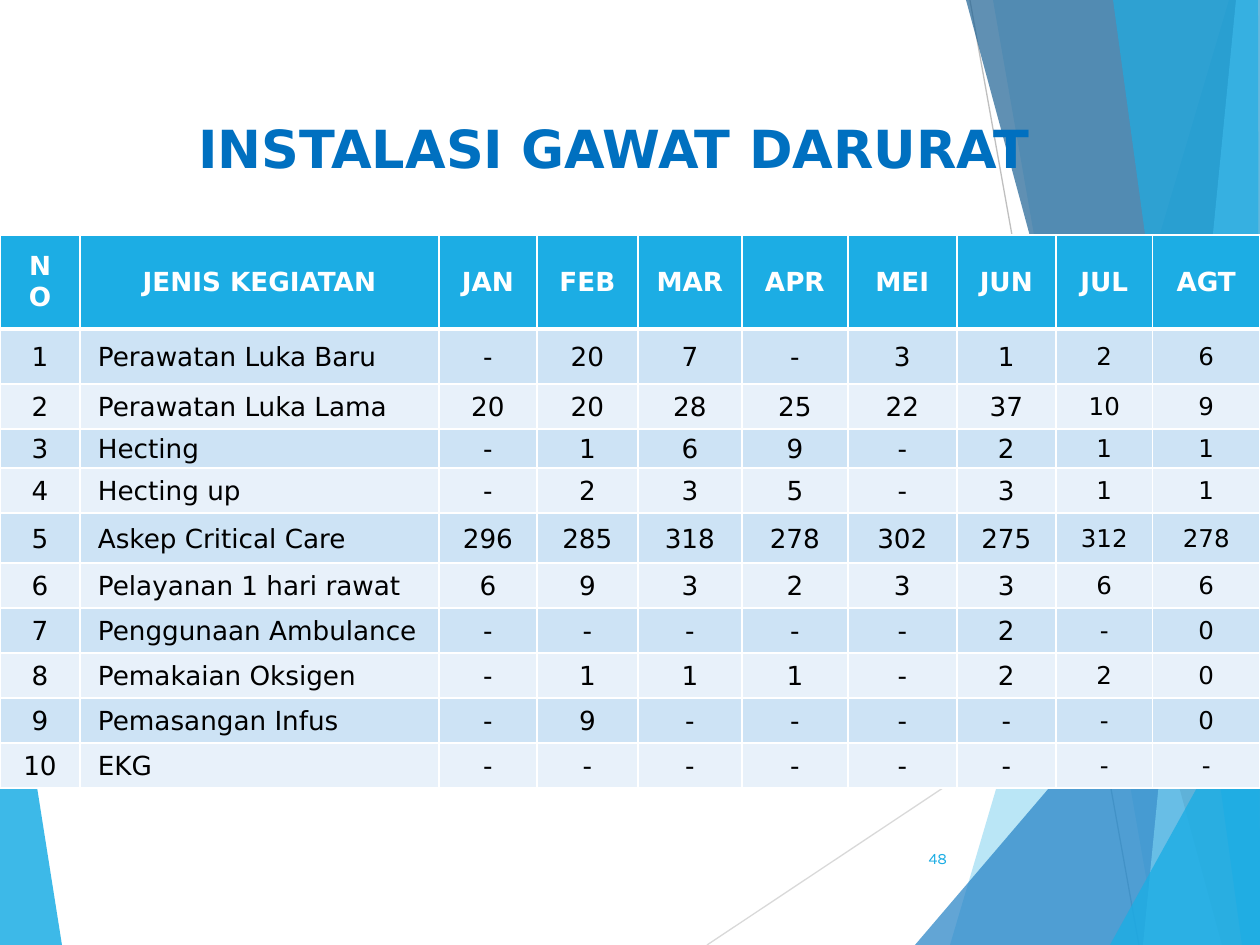
from dataclasses import dataclass

from lxml.etree import SubElement
from pptx import Presentation
from pptx.dml.color import RGBColor
from pptx.enum.shapes import MSO_CONNECTOR
from pptx.enum.text import MSO_ANCHOR, PP_ALIGN
from pptx.oxml.ns import qn
from pptx.util import Pt

PX = 914400 / 126


@dataclass(frozen=True)
class Theme:
    """Colours, fonts and type sizes of the slide."""
    title: str = "0070C0"
    accent: str = "1CADE4"
    blue: str = "2683C6"
    navy: str = "1D6294"
    sky: str = "77CEEF"
    band: str = "CDE3F5"
    pale: str = "E8F1FA"
    white: str = "FFFFFF"
    black: str = "000000"
    light_grey: str = "D9D9D9"
    grey: str = "BFBFBF"
    font: str = "DejaVu Sans"
    number_font: str = "Karla"
    title_size: int = 30
    table_size: int = 15
    late_size: int = 14
    number_size: int = 9


THEME = Theme()
RAYS = [
    ((707, 945), (1260, 577), THEME.light_grey),
    ((970, 0), (1139, 945), THEME.grey),
]
CORNER = (THEME.accent, 85, [(0, 553), (62, 945), (0, 945)])
FACETS = [
    (THEME.accent, 30, [(1229, 0), (950, 945), (1260, 945), (1260, 0)]),
    (THEME.accent, 20, [(993, 0), (1158, 945), (1260, 945), (1260, 0)]),
    (THEME.blue, 72, [(915, 945), (1260, 541), (1260, 945)]),
    (THEME.navy, 70, [(966, 0), (1222, 945), (1260, 945), (1260, 0)]),
    (THEME.sky, 70, [(1236, 0), (1143, 945), (1260, 945), (1260, 0)]),
    (THEME.accent, 65, [(1113, 0), (1242, 945), (1260, 945), (1258, 0)]),
    (THEME.accent, 80, [(1110, 945), (1260, 674), (1260, 945)]),
]
COLUMN_WIDTHS = [80, 359, 98, 101, 104, 106, 109, 99, 97, 107]
ROW_HEIGHTS = [94, 55, 45, 39, 45, 50, 45, 45, 45, 45, 45]
NAME_COLUMN = 1
LATE_COLUMN = 8
HEADINGS = ["NO", "JENIS KEGIATAN", "JAN", "FEB", "MAR", "APR", "MEI", "JUN", "JUL", "AGT"]
ACTIVITIES = [
    ("Perawatan Luka Baru", "- 20 7 - 3 1 2 6"),
    ("Perawatan Luka Lama", "20 20 28 25 22 37 10 9"),
    ("Hecting", "- 1 6 9 - 2 1 1"),
    ("Hecting up", "- 2 3 5 - 3 1 1"),
    ("Askep Critical Care", "296 285 318 278 302 275 312 278"),
    ("Pelayanan 1 hari rawat", "6 9 3 2 3 3 6 6"),
    ("Penggunaan Ambulance", "- - - - - 2 - 0"),
    ("Pemakaian Oksigen", "- 1 1 1 - 2 2 0"),
    ("Pemasangan Infus", "- 9 - - - - - 0"),
    ("EKG", "- - - - - - - -"),
]


def px(length):
    """Turn pixels into EMU."""
    return round(length * PX)


def color(code):
    """Turn a hex code into a colour."""
    return RGBColor.from_string(code)


def style(paragraph, size, code, align, bold=False, font=THEME.font):
    """Set the type and alignment of a paragraph."""
    paragraph.alignment = align
    paragraph.font.name = font
    paragraph.font.size = Pt(size)
    paragraph.font.bold = bold
    paragraph.font.color.rgb = color(code)


def set_margins(holder, left, top, right, bottom):
    """Set the four insets of a text frame or cell."""
    holder.margin_left, holder.margin_top = px(left), px(top)
    holder.margin_right, holder.margin_bottom = px(right), px(bottom)


def add_facet(page, code, opacity, points):
    """Draw a translucent polygon."""
    builder = page.shapes.build_freeform(*points[0], scale=PX)
    builder.add_line_segments(points[1:], close=True)
    facet = builder.convert_to_shape()
    facet.shadow.inherit = False
    facet.line.fill.background()
    facet.fill.solid()
    facet.fill.fore_color.rgb = color(code)
    tint = facet._element.spPr.find(qn("a:solidFill"))[0]
    SubElement(tint, qn("a:alpha"), val=str(opacity * 1000))


def add_ray(page, start, end, code):
    """Draw a thin straight line."""
    ray = page.shapes.add_connector(MSO_CONNECTOR.STRAIGHT, *map(px, start + end))
    ray.line.color.rgb = color(code)
    ray.line.width = Pt(0.75)
    SubElement(ray._element.spPr, qn("a:effectLst"))


def add_text(page, text, bounds, margins, anchor, **type_style):
    """Add a text box of one paragraph."""
    frame = page.shapes.add_textbox(*map(px, bounds)).text_frame
    frame.word_wrap = True
    frame.vertical_anchor = anchor
    set_margins(frame, *margins)
    paragraph = frame.paragraphs[0]
    paragraph.text = text
    style(paragraph, **type_style)


def set_borders(cell, **widths):
    """Give a cell white borders, with widths in points by side."""
    properties = cell._tc.get_or_add_tcPr()
    for index, (side, width) in enumerate(widths.items()):
        line = SubElement(properties, qn(f"a:ln{side}"), w=str(Pt(width)))
        fill = SubElement(line, qn("a:solidFill"))
        SubElement(fill, qn("a:srgbClr"), val=THEME.white)
        properties.insert(index, line)


def fill_cell(cell, text, row, column):
    """Write and format one table cell."""
    header = row == 0
    named = column == NAME_COLUMN and not header
    late = column >= LATE_COLUMN and not header
    cell.text = text
    cell.vertical_anchor = MSO_ANCHOR.MIDDLE
    set_margins(cell, *((18, 9, 18, 9) if header else (18 if named else 2, 2, 2, 0)))
    cell.fill.solid()
    band = THEME.band if row % 2 else THEME.pale
    cell.fill.fore_color.rgb = color(THEME.accent if header else band)
    set_borders(cell, L=1, R=1, T=3 if row == 1 else 1, B=3 if header else 1)
    style(
        cell.text_frame.paragraphs[0],
        THEME.late_size if late else THEME.table_size,
        THEME.white if header else THEME.black,
        PP_ALIGN.LEFT if named else PP_ALIGN.CENTER,
        bold=header,
    )


def add_activity_table(page):
    """Add the table of monthly activities."""
    rows = [HEADINGS]
    rows += [[str(number), name, *counts.split()]
             for number, (name, counts) in enumerate(ACTIVITIES, 1)]
    bounds = (0, 235, sum(COLUMN_WIDTHS), sum(ROW_HEIGHTS))
    table = page.shapes.add_table(len(rows), len(HEADINGS), *map(px, bounds)).table
    for column, width in zip(table.columns, COLUMN_WIDTHS):
        column.width = px(width)
    for row, height in zip(table.rows, ROW_HEIGHTS):
        row.height = px(height)
    for row, values in enumerate(rows):
        for column, text in enumerate(values):
            fill_cell(table.cell(row, column), text, row, column)


def main():
    """Build the slide and save the deck."""
    deck = Presentation()
    deck.slide_width, deck.slide_height = px(1260), px(945)
    page = deck.slides.add_slide(deck.slide_layouts[6])
    add_facet(page, *CORNER)
    for ray in RAYS:
        add_ray(page, *ray)
    for facet in FACETS:
        add_facet(page, *facet)
    add_text(page, "INSTALASI GAWAT DARURAT", (157, 105, 914, 102), (12, 11, 12, 6),
             MSO_ANCHOR.TOP, size=THEME.title_size, code=THEME.title,
             align=PP_ALIGN.CENTER, bold=True)
    add_activity_table(page)
    add_text(page, "48", (888, 833, 71, 50), (12, 6, 12, 6), MSO_ANCHOR.MIDDLE,
             size=THEME.number_size, code=THEME.accent, align=PP_ALIGN.RIGHT,
             font=THEME.number_font)
    deck.save("out.pptx")


if __name__ == "__main__":
    main()
